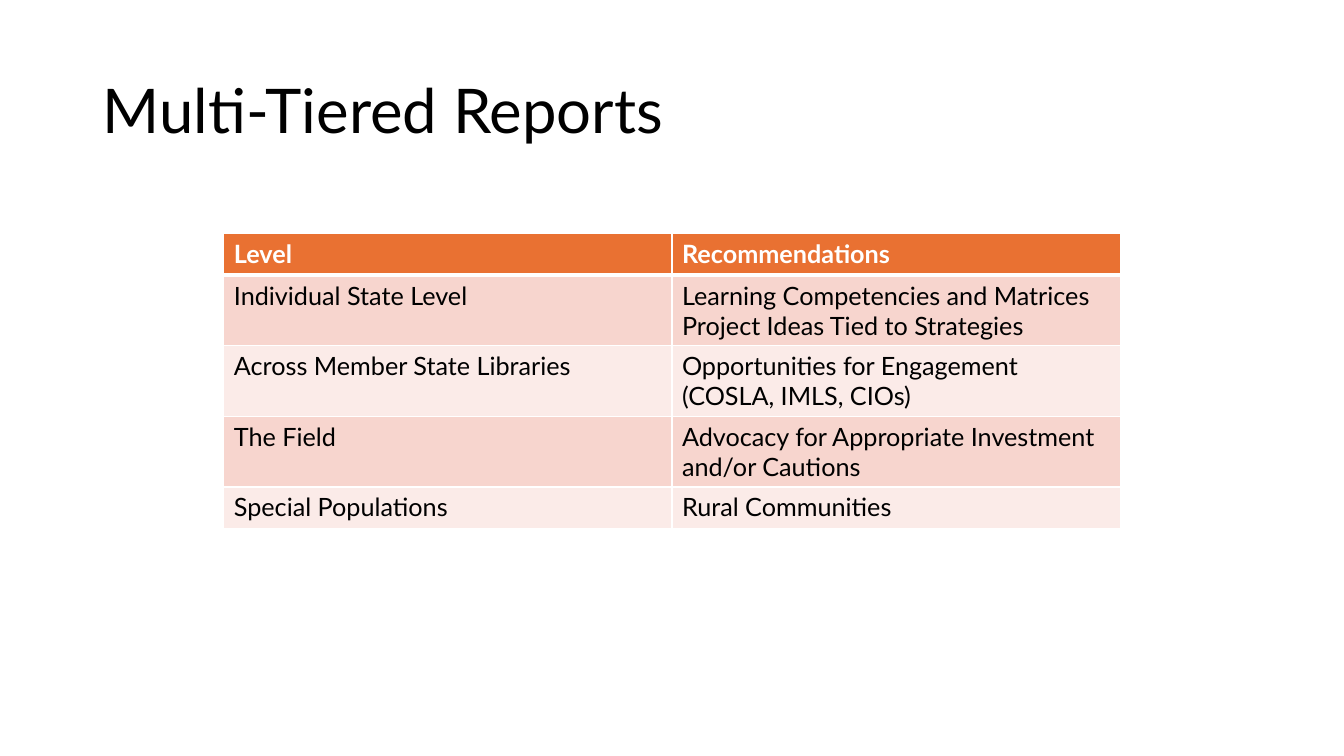
"""Build the Multi-Tiered Reports slide."""
from lxml import etree
from pptx import Presentation
from pptx import util as u
from pptx.dml.color import RGBColor
from pptx.enum import text
from pptx.oxml import ns

FONT = "Lato"
WHITE, BLACK = "FFFFFF", "000000"
HEADER_FILL = "E97132"
BAND_FILLS = ["F7D5CE", "FBEBE8"]
ROWS = [
    (["Level"], ["Recommendations"]),
    (["Individual State Level"],
     ["Learning Competencies and Matrices", "Project Ideas Tied to Strategies"]),
    (["Across Member State Libraries"],
     ["Opportunities for Engagement (COSLA, IMLS, CIOs)"]),
    (["The Field"], ["Advocacy for Appropriate Investment and/or Cautions"]),
    (["Special Populations"], ["Rural Communities"]),
]


def rgb(value):
    """Return the colour for a hex string."""
    return RGBColor.from_string(value)


def add_run(p, words, size, color, bold=False):
    """Add one formatted run to a paragraph."""
    r = p.add_run()
    r.text = words
    r.font.name = FONT
    r.font.size = u.Pt(size)
    r.font.bold = bold
    r.font.color.rgb = rgb(color)


def add_title(s, words):
    """Place and fill the title placeholder."""
    sp = s.shapes.title
    sp.left, sp.top = u.Inches(0.92), u.Inches(0.4)
    sp.width, sp.height = u.Inches(11.5), u.Inches(1.45)
    tf = sp.text_frame
    tf.word_wrap = True
    tf.vertical_anchor = text.MSO_ANCHOR.MIDDLE
    p = tf.paragraphs[0]
    p.alignment = text.PP_ALIGN.LEFT
    p.line_spacing = 0.9
    add_run(p, words, 44, BLACK)


def set_borders(cell, widths):
    """Draw white cell borders, with widths in points by side."""
    tc_pr = cell._tc.get_or_add_tcPr()
    for side, width in widths.items():
        ln = etree.SubElement(tc_pr, ns.qn(f"a:ln{side}"), w=str(u.Pt(width)))
        fill = etree.SubElement(ln, ns.qn("a:solidFill"))
        etree.SubElement(fill, ns.qn("a:srgbClr"), val=WHITE)


def fill_cell(cell, lines, row):
    """Style a cell by its row and write its lines as paragraphs."""
    header = row == 0
    set_borders(cell, {"L": 1, "R": 1, "T": 3 if row == 1 else 1,
                       "B": 3 if header else 1})
    cell.fill.solid()
    cell.fill.fore_color.rgb = rgb(HEADER_FILL if header else BAND_FILLS[(row - 1) % 2])
    tf = cell.text_frame
    for i, line in enumerate(lines):
        p = tf.add_paragraph() if i else tf.paragraphs[0]
        add_run(p, line, 18, WHITE if header else BLACK, header)


def add_report_table(s, rows):
    """Add the table of levels and recommendations."""
    row_height = u.Inches(0.41)
    table = s.shapes.add_table(len(rows), 2, u.Inches(2.22), u.Inches(2.32),
                               u.Inches(8.89), row_height * len(rows)).table
    for i, row in enumerate(rows):
        table.rows[i].height = row_height
        for j, lines in enumerate(row):
            fill_cell(table.cell(i, j), lines, i)


def main():
    """Build and save the slide."""
    prs = Presentation()
    prs.slide_width, prs.slide_height = u.Inches(13.33), u.Inches(7.5)
    s = prs.slides.add_slide(prs.slide_layouts[5])
    add_title(s, "Multi-Tiered Reports")
    add_report_table(s, ROWS)
    prs.save("out.pptx")


if __name__ == "__main__":
    main()
